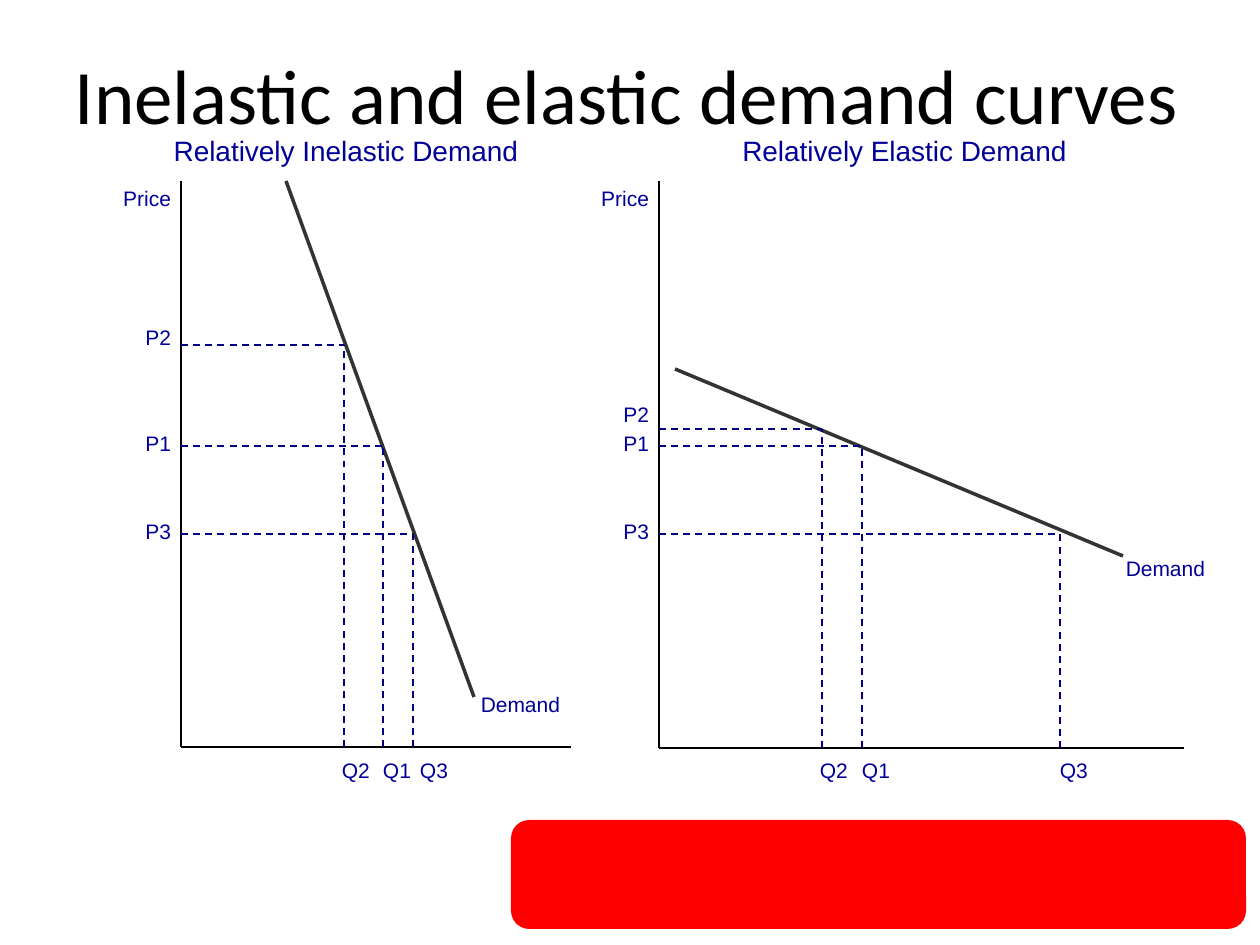
from dataclasses import dataclass

from lxml.etree import SubElement
from pptx import Presentation
from pptx.dml.color import RGBColor
from pptx.enum.dml import MSO_LINE
from pptx.enum.shapes import MSO_CONNECTOR, MSO_SHAPE
from pptx.enum.text import MSO_ANCHOR, PP_ALIGN
from pptx.oxml.ns import qn
from pptx.util import Emu, Pt

PX = 914400 / 126
BLACK = RGBColor(0x00, 0x00, 0x00)
CHARCOAL = RGBColor(0x33, 0x33, 0x33)
NAVY = RGBColor(0x00, 0x00, 0x80)
LABEL_BLUE = RGBColor(0x00, 0x00, 0x99)
RED = RGBColor(0xFF, 0x00, 0x00)

AXIS_TOP = 181
LABEL_HEIGHT = 35
PRICE_WIDTH, P_WIDTH, Q_WIDTH, DEMAND_WIDTH = 126, 63, 76, 189


@dataclass
class Market:
    heading: str
    heading_box: tuple
    origin: tuple
    axis_end: int
    demand: tuple
    demand_label: tuple
    # (number, quantity x, price y, Q label left, P label top)
    points: tuple


INELASTIC = Market(
    "Relatively Inelastic Demand", (150, 129, 392, 44), (181, 747), 571,
    ((286, 181), (474, 697)), (426, 687),
    ((1, 383, 446, 345, 426), (2, 344, 345, 304, 320), (3, 413, 534, 382, 514)),
)
ELASTIC = Market(
    "Relatively Elastic Demand", (723, 129, 363, 44), (659, 748), 1184,
    ((675, 369), (1123, 556)), (1071, 551),
    ((1, 862, 446, 824, 426), (2, 822, 429, 782, 397), (3, 1060, 534, 1022, 514)),
)


def px(*lengths):
    return [Emu(round(length * PX)) for length in lengths]


def add_label(slide, text, box, align=PP_ALIGN.RIGHT, size=12,
              font="Arial", color=LABEL_BLUE, anchor=MSO_ANCHOR.TOP):
    frame = slide.shapes.add_textbox(*px(*box)).text_frame
    side, edge = px(10, 5)
    frame_format = {
        "word_wrap": True, "vertical_anchor": anchor,
        "margin_left": side, "margin_right": side,
        "margin_top": edge, "margin_bottom": edge,
    }
    for name, value in frame_format.items():
        setattr(frame, name, value)
    paragraph = frame.paragraphs[0]
    paragraph.alignment = align
    run = paragraph.add_run()
    run.text = text
    for name, value in {"name": font, "size": Pt(size)}.items():
        setattr(run.font, name, value)
    run.font.color.rgb = color


def add_line(slide, start, end, color, width, dash=None):
    connector = slide.shapes.add_connector(
        MSO_CONNECTOR.STRAIGHT, *px(*start, *end))
    connector.line.color.rgb = color
    for name, value in {"width": Pt(width), "dash_style": dash}.items():
        setattr(connector.line, name, value)
    SubElement(connector._element.spPr, qn("a:effectLst"))


def add_banner(slide):
    banner = slide.shapes.add_shape(
        MSO_SHAPE.ROUNDED_RECTANGLE, *px(511, 820, 735, 109))
    banner.shadow.inherit = False
    banner.fill.solid()
    banner.fill.fore_color.rgb = RED
    banner.line.fill.background()


def add_market(slide, market):
    axis_x, base_y = market.origin
    add_line(slide, (axis_x, AXIS_TOP), market.origin, BLACK, 1.5)
    add_line(slide, market.origin, (market.axis_end, base_y), BLACK, 1.5)
    add_label(slide, "Price",
              (axis_x - PRICE_WIDTH, AXIS_TOP, PRICE_WIDTH, LABEL_HEIGHT))
    add_line(slide, *market.demand, CHARCOAL, 2)
    add_label(slide, "Demand",
              (*market.demand_label, DEMAND_WIDTH, LABEL_HEIGHT), PP_ALIGN.CENTER)
    for number, quantity, price, q_left, p_top in market.points:
        for foot in ((axis_x, price), (quantity, base_y)):
            add_line(slide, foot, (quantity, price), NAVY, 1, MSO_LINE.DASH)
        add_label(slide, f"P{number}",
                  (axis_x - P_WIDTH, p_top, P_WIDTH, LABEL_HEIGHT))
        add_label(slide, f"Q{number}", (q_left, 753, Q_WIDTH, LABEL_HEIGHT))
    add_label(slide, market.heading, market.heading_box, PP_ALIGN.CENTER, 16)


def main():
    deck = Presentation()
    deck.slide_width, deck.slide_height = px(1260, 945)
    slide = deck.slides.add_slide(deck.slide_layouts[6])
    add_banner(slide)
    add_label(slide, "Inelastic and elastic demand curves", (60, 15, 1134, 158),
              PP_ALIGN.CENTER, 44, "Calibri", BLACK, MSO_ANCHOR.MIDDLE)
    for market in (INELASTIC, ELASTIC):
        add_market(slide, market)
    deck.save("out.pptx")


if __name__ == "__main__":
    main()
